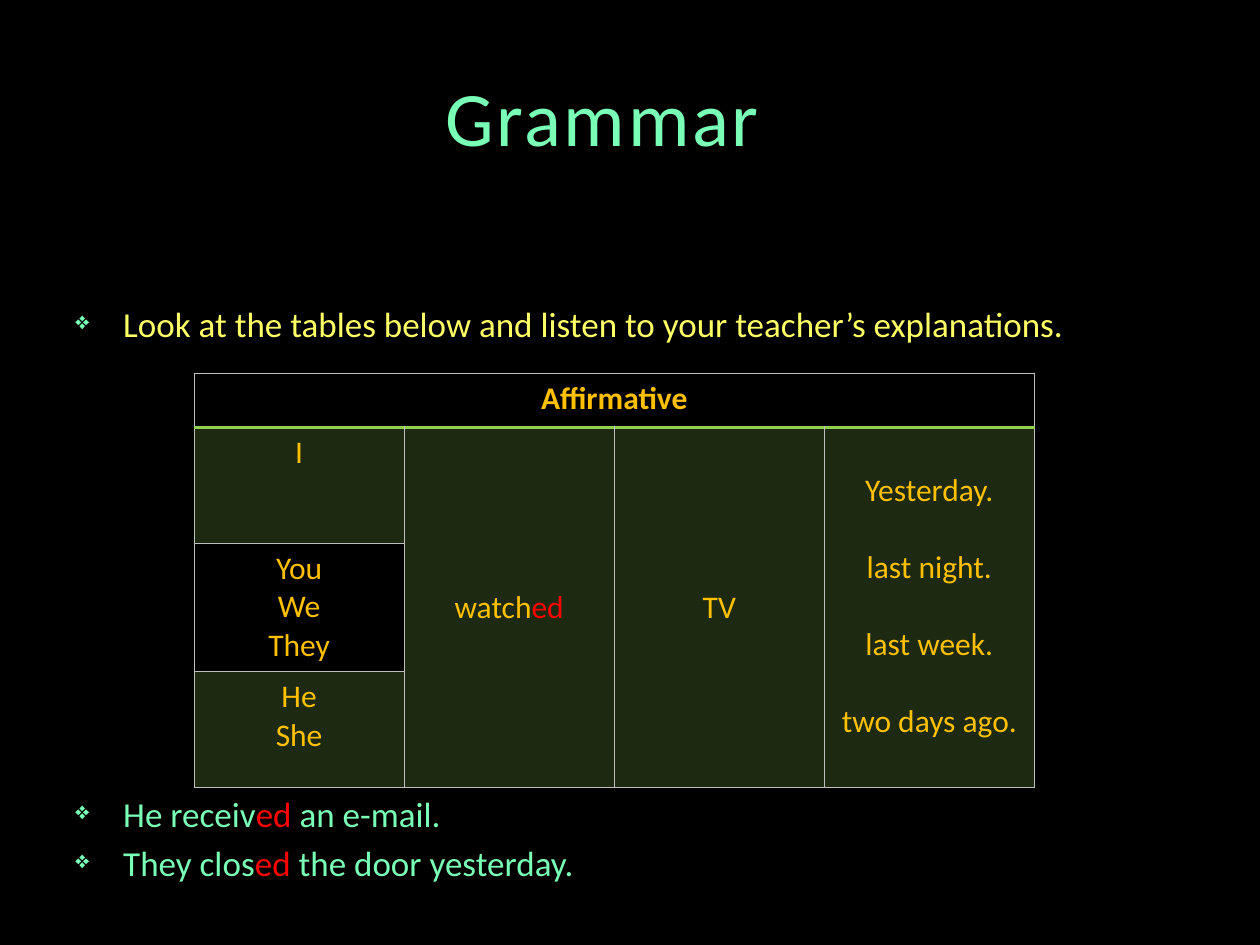
"""Build the Grammar slide with an affirmative past simple table."""
from dataclasses import dataclass

from lxml.etree import SubElement
from pptx import Presentation
from pptx.dml.color import RGBColor as RGB
from pptx.enum.text import MSO_ANCHOR as Anchor, PP_ALIGN as Align
from pptx.oxml import parse_xml
from pptx.oxml.ns import nsdecls, qn
from pptx.util import Inches, Pt


@dataclass(frozen=True)
class Theme:
    """Colours, font and type sizes of the slide."""
    font: str = "Calibri"
    background: str = "000000"
    mint: str = "79FFB6"
    yellow: str = "FFFF66"
    gold: str = "FFC000"
    red: str = "FF0000"
    green: str = "92D050"
    grid: str = "BFBFBF"
    title: int = 44
    body: int = 20
    table: int = 18


THEME = Theme()


def add_runs(paragraph, runs, size, bold=False):
    """Add (text, colour) runs to a paragraph."""
    for text, colour in runs:
        run = paragraph.add_run()
        run.text = text
        style = {"name": THEME.font, "size": Pt(size), "bold": bold}
        for key, value in style.items():
            setattr(run.font, key, value)
        run.font.color.rgb = RGB.from_string(colour)


def next_paragraph(frame, index):
    """Return the first paragraph of a frame or append another one."""
    return frame.add_paragraph() if index else frame.paragraphs[0]


def add_title(slide, text):
    """Place and format the title placeholder."""
    title = slide.shapes.title
    place = {"left": 0.28, "top": 0.29, "width": 9, "height": 1.25}
    for key, value in place.items():
        setattr(title, key, Inches(value))
    frame = title.text_frame
    frame.vertical_anchor = Anchor.MIDDLE
    heading = frame.paragraphs[0]
    heading.alignment = Align.CENTER
    add_runs(heading, [(text, THEME.mint)], THEME.title)
    heading.runs[0].font._element.set("spc", "150")


def set_bullet(paragraph):
    """Give a paragraph a hanging diamond bullet."""
    properties = paragraph._p.get_or_add_pPr()
    indent = Inches(0.38)
    properties.set("marL", str(indent))
    properties.set("indent", str(-indent))
    colour = SubElement(properties, qn("a:buClr"))
    SubElement(colour, qn("a:srgbClr"), val=THEME.mint)
    SubElement(properties, qn("a:buSzPct"), val="70000")
    SubElement(properties, qn("a:buChar"), char="❖")


def add_bullets(slide, items):
    """Add bulleted (space before, runs) items in one text box."""
    box = slide.shapes.add_textbox(Inches(0.5), Inches(2.35), Inches(9), Inches(4.95))
    frame = box.text_frame
    frame.word_wrap = True
    for index, (space, runs) in enumerate(items):
        paragraph = next_paragraph(frame, index)
        set_bullet(paragraph)
        paragraph.space_before = Pt(space)
        add_runs(paragraph, runs, THEME.body)


def set_borders(cell, sides):
    """Draw the four cell borders from a dict of side to (colour, points)."""
    properties = cell._tc.get_or_add_tcPr()
    for index, (side, (colour, width)) in enumerate(sides.items()):
        properties.insert(index, parse_xml(
            f'<a:ln{side} {nsdecls("a")} w="{Pt(width)}"><a:solidFill>'
            f'<a:srgbClr val="{colour}"/></a:solidFill></a:ln{side}>'))


def style_cell(cell, row, tinted):
    """Set the fill and borders of a table cell."""
    if tinted:
        cell.fill.solid()
        cell.fill.fore_color.rgb = RGB.from_string(THEME.green)
        colour = cell._tc.tcPr.find(f'.//{qn("a:srgbClr")}')
        SubElement(colour, qn("a:alpha"), val="20000")
    else:
        cell.fill.background()
    thin, rule = (THEME.grid, 0.5), (THEME.green, 2)
    set_borders(cell, {"L": thin, "R": thin,
                       "T": rule if row == 1 else thin,
                       "B": rule if row == 0 else thin})


def fill_cell(cell, lines, bold=False, spacing=1, anchor=Anchor.TOP):
    """Write centred lines of runs in a table cell."""
    cell.vertical_anchor = anchor
    for index, runs in enumerate(lines):
        paragraph = next_paragraph(cell.text_frame, index)
        paragraph.alignment = Align.CENTER
        paragraph.line_spacing = spacing
        add_runs(paragraph, runs, THEME.table, bold)


def gold_lines(*texts):
    """Turn texts into single-run gold lines."""
    return [[(text, THEME.gold)] for text in texts]


def add_affirmative_table(slide):
    """Add the table of pronouns, verb, object and time expressions."""
    heights = [0.43, 0.92, 1.02, 0.92]
    table = slide.shapes.add_table(4, 4, Inches(1.54), Inches(2.96),
                                   Inches(6.67), Inches(sum(heights))).table
    table.first_row = table.horz_banding = False
    for row, height in enumerate(heights):
        table.rows[row].height = Inches(height)
        for column in range(4):
            tinted = row > 0 and (column > 0 or row != 2)
            style_cell(table.cell(row, column), row, tinted)
    table.cell(0, 0).merge(table.cell(0, 3))
    for column in range(1, 4):
        table.cell(1, column).merge(table.cell(3, column))

    fill_cell(table.cell(0, 0), gold_lines("Affirmative"), bold=True)
    pronouns = [("I",), ("You", "We", "They"), ("He", "She")]
    for row, group in enumerate(pronouns, start=1):
        fill_cell(table.cell(row, 0), gold_lines(*group))
    verb = [[("watch", THEME.gold), ("ed", THEME.red)]]
    fill_cell(table.cell(1, 1), verb, anchor=Anchor.MIDDLE)
    fill_cell(table.cell(1, 2), gold_lines("TV"), anchor=Anchor.MIDDLE)
    times = gold_lines("Yesterday.", "last night.", "last week.", "two days ago.")
    fill_cell(table.cell(1, 3), times, spacing=2)


def past_example(start, end):
    """Return the runs of a sentence whose -ed ending is red."""
    return [(start, THEME.mint), ("ed", THEME.red), (end, THEME.mint)]


def main():
    """Build and save the slide."""
    deck = Presentation()
    deck.slide_width, deck.slide_height = Inches(10), Inches(7.5)
    slide = deck.slides.add_slide(deck.slide_layouts[5])
    slide.background.fill.solid()
    slide.background.fill.fore_color.rgb = RGB.from_string(THEME.background)
    add_title(slide, "Grammar")
    instruction = "Look at the tables below and listen to your teacher’s explanations."
    add_bullets(slide, [
        (0, [(instruction, THEME.yellow)]),
        (256, past_example("He receiv", " an e-mail.")),
        (4, past_example("They clos", " the door yesterday.")),
    ])
    add_affirmative_table(slide)
    deck.save("out.pptx")


if __name__ == "__main__":
    main()
